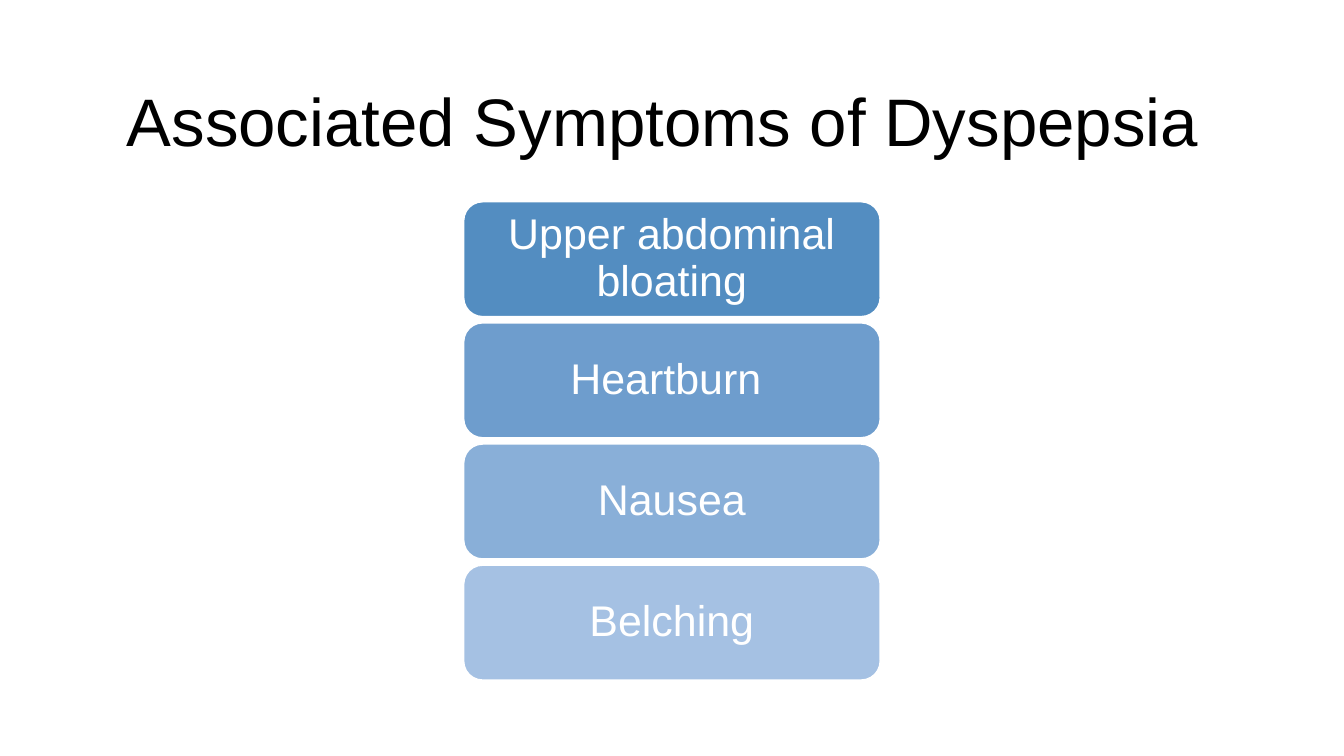
from pptx import Presentation
from pptx.dml.color import RGBColor
from pptx.enum.shapes import MSO_SHAPE as Shape
from pptx.enum.text import MSO_ANCHOR as Anchor, PP_ALIGN as Align
from pptx.util import Cm, Pt


def color(value):
    return RGBColor.from_string(value)


class SymptomSlide:
    font_name = "Arial"
    line_spacing = 0.9

    def __init__(self, deck):
        self.slide = deck.slides.add_slide(deck.slide_layouts[6])

    def set_words(self, frame, words, size, ink):
        frame.word_wrap = True
        frame.vertical_anchor = Anchor.MIDDLE
        paragraph = frame.paragraphs[0]
        paragraph.text = words
        paragraph.alignment = Align.CENTER
        paragraph.line_spacing = self.line_spacing
        paragraph.font.name = self.font_name
        paragraph.font.size = Pt(size)
        paragraph.font.color.rgb = color(ink)

    def title(self, words, left, top, width, height):
        heading = self.slide.shapes.add_textbox(Cm(left), Cm(top), Cm(width), Cm(height))
        self.set_words(heading.text_frame, words, 36, "000000")

    def card(self, words, fill, left, top, width, height):
        symptom = self.slide.shapes.add_shape(
            Shape.ROUNDED_RECTANGLE, Cm(left), Cm(top), Cm(width), Cm(height))
        symptom.shadow.inherit = False
        symptom.fill.solid()
        symptom.fill.fore_color.rgb = color(fill)
        symptom.line.color.rgb = color("FFFFFF")
        symptom.line.width = Pt(1)
        self.set_words(symptom.text_frame, words, 23, "FFFFFF")


def main():
    deck = Presentation()
    deck.slide_width, deck.slide_height = Cm(25.4), Cm(14.29)
    page = SymptomSlide(deck)
    page.title("Associated Symptoms of Dyspepsia ", 1.75, 1.17, 21.9, 2.36)

    symptoms = [
        ("Upper abdominal bloating", "538DC1"),
        ("Heartburn ", "6E9DCD"),
        ("Nausea", "89AFD8"),
        ("Belching", "A5C1E3"),
    ]
    first_top, pitch = 3.81, 2.29
    for row, (words, fill) in enumerate(symptoms):
        page.card(words, fill, 8.76, first_top + row * pitch, 7.88, 2.18)

    deck.save("out.pptx")


if __name__ == "__main__":
    main()
